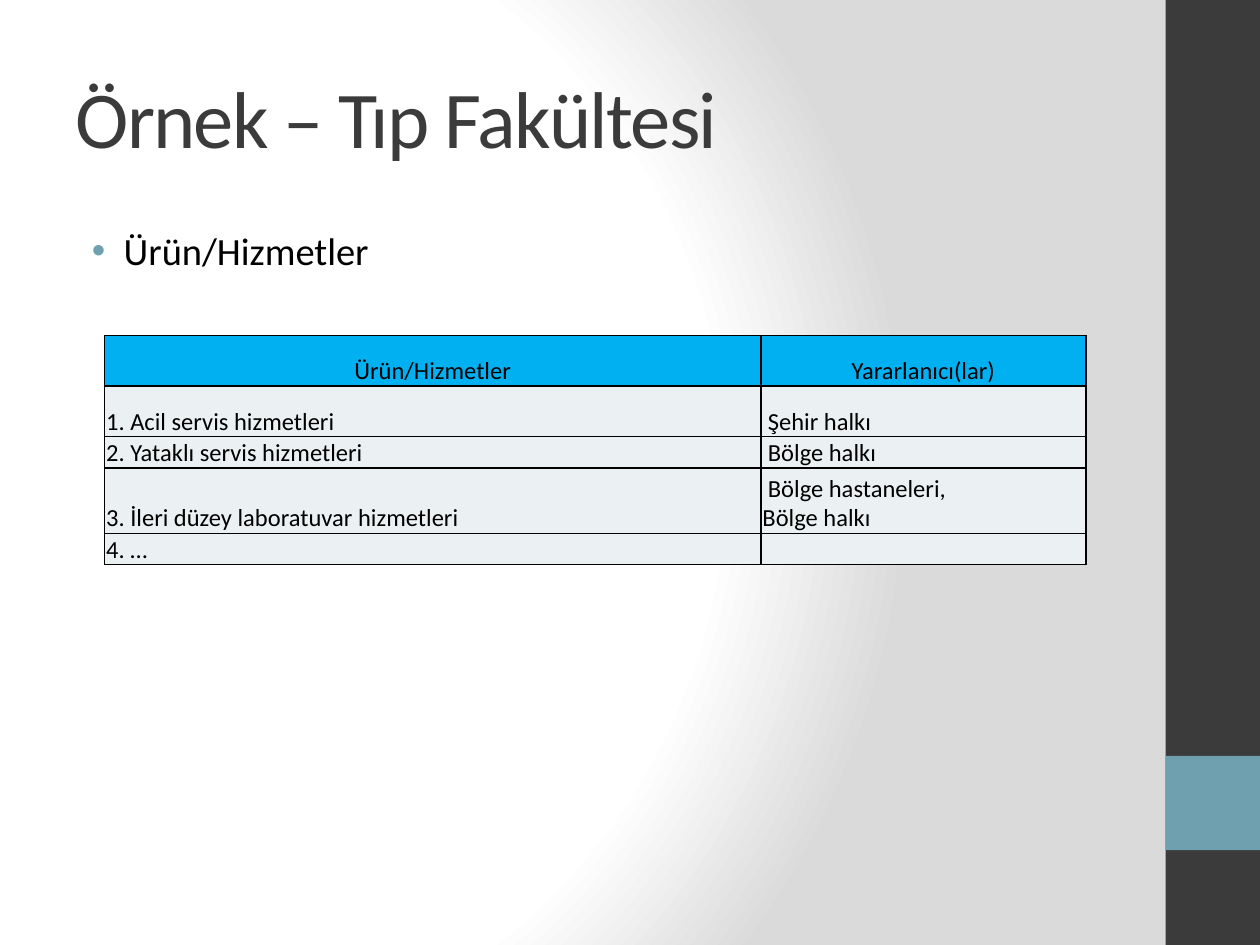
import pptx
import pptx.dml.color
import pptx.enum.shapes
import pptx.enum.text
import pptx.oxml
import pptx.oxml.ns
import pptx.util
from lxml import etree
from pptx.dml.color import RGBColor
from pptx.util import Cm

DARK = RGBColor(0x3B, 0x3B, 0x3B)
ACCENT = RGBColor(0x6E, 0xA0, 0xB0)
BLACK = RGBColor(0x00, 0x00, 0x00)
HEADER_FILL = RGBColor(0x00, 0xB0, 0xF0)
BODY_FILL = RGBColor(0xEB, 0xF0, 0xF2)
BACKGROUND_STOPS = [(0, "FFFFFF"), (75, "FFFFFF"), (100, "DADADA")]
FONT = "Calibri"

TITLE = "Örnek – Tıp Fakültesi"
BULLET = "Ürün/Hizmetler"
SERVICES = [
    ("Ürün/Hizmetler", "Yararlanıcı(lar)"),
    ("1. Acil servis hizmetleri", "Şehir halkı"),
    ("2. Yataklı servis hizmetleri", "Bölge halkı"),
    ("3. İleri düzey laboratuvar hizmetleri", "Bölge hastaneleri,\nBölge halkı"),
    ("4. …", ""),
]
COLUMN_WIDTHS = [13.23, 6.55]
ROW_HEIGHTS = [1.02, 1.02, 0.5, 1.32, 0.5]
SIDEBAR = [(0, 19.05, DARK), (15.24, 1.9, ACCENT)]

ALIGN = pptx.enum.text.PP_ALIGN
ANCHOR = pptx.enum.text.MSO_ANCHOR
qn = pptx.oxml.ns.qn


def write_text(frame, text, size, color=BLACK, align=ALIGN.LEFT, bullet=None,
               margin=0, indent=0, spacing=None):
    """Fill a text frame, one paragraph a line; indent applies to the first."""
    frame.text = text
    for number, paragraph in enumerate(frame.paragraphs):
        properties = paragraph._p.get_or_add_pPr()
        properties.set("marL", str(Cm(margin)))
        properties.set("indent", str(Cm(indent if number == 0 else 0)))
        if bullet:
            bullet_color = etree.SubElement(properties, qn("a:buClr"))
            etree.SubElement(bullet_color, qn("a:srgbClr"), val=str(ACCENT))
            etree.SubElement(properties, qn("a:buChar"), char=bullet)
        paragraph.alignment = align
        paragraph.space_before = pptx.util.Pt(0)
        for run in paragraph.runs:
            run.font.name = FONT
            run.font.size = pptx.util.Pt(size)
            run.font.color.rgb = color
            if spacing is not None:
                run._r.get_or_add_rPr().set("spc", str(spacing * 100))
        if not paragraph.runs:
            etree.SubElement(paragraph._p, qn("a:endParaRPr"), sz=str(size * 100))


def set_background(slide):
    stops = "".join(f'<a:gs pos="{position * 1000}"><a:srgbClr val="{color}"/></a:gs>'
                    for position, color in BACKGROUND_STOPS)
    background = pptx.oxml.parse_xml(
        f'<p:bg {pptx.oxml.ns.nsdecls("p", "a")}><p:bgPr><a:gradFill rotWithShape="1">'
        f'<a:gsLst>{stops}</a:gsLst><a:path path="circle">'
        '<a:fillToRect l="20000" t="50000" r="100000" b="50000"/></a:path>'
        '</a:gradFill><a:effectLst/></p:bgPr></p:bg>')
    slide._element.cSld.insert(0, background)


def add_sidebar(slide):
    for top, height, color in SIDEBAR:
        shape = slide.shapes.add_shape(pptx.enum.shapes.MSO_SHAPE.RECTANGLE,
                                       Cm(23.5), Cm(top), Cm(1.9), Cm(height))
        shape.shadow.inherit = False
        shape.fill.solid()
        shape.fill.fore_color.rgb = color
        shape.line.fill.background()


def place(placeholder, left, top, width, height, anchor):
    placeholder.left, placeholder.top = Cm(left), Cm(top)
    placeholder.width, placeholder.height = Cm(width), Cm(height)
    frame = placeholder.text_frame
    frame.auto_size = pptx.enum.text.MSO_AUTO_SIZE.NONE
    frame.vertical_anchor = anchor
    return frame


def format_cell(cell, fill):
    cell.vertical_anchor = ANCHOR.BOTTOM
    cell.margin_left = cell.margin_right = cell.margin_top = Cm(0.03)
    cell.margin_bottom = 0
    properties = cell._tc.get_or_add_tcPr()
    for side in ("a:lnL", "a:lnR", "a:lnT", "a:lnB"):
        line = etree.SubElement(properties, qn(side), w=str(pptx.util.Pt(1)))
        line_fill = etree.SubElement(line, qn("a:solidFill"))
        etree.SubElement(line_fill, qn("a:srgbClr"), val=str(BLACK))
    cell.fill.solid()
    cell.fill.fore_color.rgb = fill


def add_services_table(slide):
    table = slide.shapes.add_table(
        len(SERVICES), len(COLUMN_WIDTHS), Cm(2.11), Cm(6.76),
        Cm(sum(COLUMN_WIDTHS)), Cm(sum(ROW_HEIGHTS))).table
    table.first_row = table.horz_banding = False
    for column, width in zip(table.columns, COLUMN_WIDTHS):
        column.width = Cm(width)
    for row_number, (row, height) in enumerate(zip(table.rows, ROW_HEIGHTS)):
        row.height = Cm(height)
        is_header = row_number == 0
        for column_number, text in enumerate(SERVICES[row_number]):
            cell = table.cell(row_number, column_number)
            format_cell(cell, HEADER_FILL if is_header else BODY_FILL)
            write_text(cell.text_frame, text, 14,
                       align=ALIGN.CENTER if is_header else ALIGN.LEFT,
                       indent=0.11 if column_number and not is_header else 0)


def main():
    presentation = pptx.Presentation()
    presentation.slide_width, presentation.slide_height = Cm(25.4), Cm(19.05)
    slide = presentation.slides.add_slide(presentation.slide_layouts[1])
    set_background(slide)
    add_sidebar(slide)
    title = place(slide.shapes.title, 1.27, 0.76, 21.16, 3.18, ANCHOR.MIDDLE)
    write_text(title, TITLE, 46, color=DARK, spacing=-1)
    body = place(slide.placeholders[1], 1.27, 4.45, 21.16, 13.34, ANCHOR.TOP)
    write_text(body, BULLET, 22, bullet="•", margin=0.97, indent=-0.64)
    add_services_table(slide)
    presentation.save("out.pptx")


if __name__ == "__main__":
    main()
